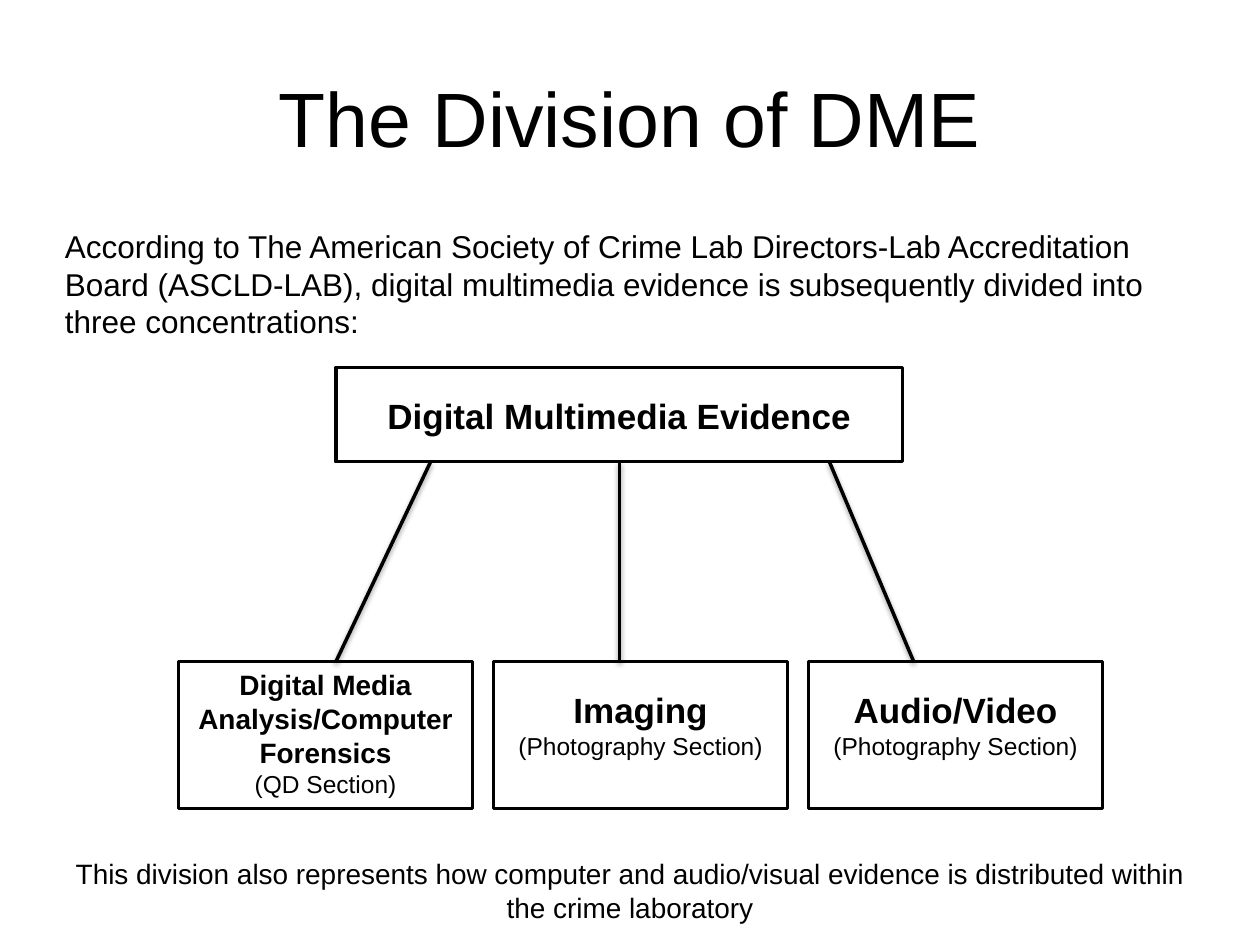
from lxml import etree
from pptx import Presentation
from pptx import util as u
from pptx.dml import color
from pptx.enum import shapes, text
from pptx.oxml import ns

LEFT, CENTER = text.PP_ALIGN.LEFT, text.PP_ALIGN.CENTER


def rgb(value):
    """Turn a hex string into a colour."""
    return color.RGBColor.from_string(value)


class Deck:
    """Hold the style and the current slide, and add elements to it."""

    font = "Arial"
    ink = "000000"
    line_width = 2

    def __init__(self, width, height):
        """Start a presentation of the given size in centimetres."""
        self.prs = Presentation()
        self.prs.slide_width, self.prs.slide_height = u.Cm(width), u.Cm(height)
        self.s = None

    def slide(self):
        """Add a title-only slide with a white background."""
        self.s = self.prs.slides.add_slide(self.prs.slide_layouts[5])
        fill = self.s.background.fill
        fill.solid()
        fill.fore_color.rgb = rgb("FFFFFF")

    def set_lines(self, tf, lines, align):
        """Fill a text frame with (text, size, bold) paragraphs."""
        tf.word_wrap = True
        for i, (line, size, bold) in enumerate(lines):
            p = tf.add_paragraph() if i else tf.paragraphs[0]
            p.text = line
            p.alignment = align
            for r in p.runs:
                r.font.name = self.font
                r.font.size = u.Pt(size)
                r.font.bold = bold
                r.font.color.rgb = rgb(self.ink)

    def title(self, line, x, y, w, h):
        """Place and fill the title placeholder."""
        sp = self.s.shapes.title
        sp.left, sp.top, sp.width, sp.height = map(u.Cm, (x, y, w, h))
        sp.text_frame.vertical_anchor = text.MSO_ANCHOR.MIDDLE
        self.set_lines(sp.text_frame, [(line, 44, False)], CENTER)

    def text(self, lines, x, y, w, h, align=CENTER):
        """Add a text box that grows with its text."""
        tf = self.s.shapes.add_textbox(*map(u.Cm, (x, y, w, h))).text_frame
        self.set_lines(tf, lines, align)
        tf.auto_size = text.MSO_AUTO_SIZE.SHAPE_TO_FIT_TEXT

    def outline(self, sp):
        """Apply the common line style."""
        sp.line.color.rgb = rgb(self.ink)
        sp.line.width = u.Pt(self.line_width)

    def box(self, x, y, w, h):
        """Add an unfilled rectangle."""
        sp = self.s.shapes.add_shape(shapes.MSO_SHAPE.RECTANGLE, *map(u.Cm, (x, y, w, h)))
        sp.shadow.inherit = False
        sp.fill.background()
        self.outline(sp)

    def link(self, x1, y1, x2, y2):
        """Add a straight line with a soft shadow below it."""
        sp = self.s.shapes.add_connector(
            shapes.MSO_CONNECTOR.STRAIGHT, *map(u.Cm, (x1, y1, x2, y2)))
        self.outline(sp)
        effects = etree.SubElement(sp._element.spPr, ns.qn("a:effectLst"))
        shadow = etree.SubElement(
            effects, ns.qn("a:outerShdw"), blurRad=str(u.Pt(3.1)),
            dist=str(u.Pt(1.6)), dir="5400000", rotWithShape="0")
        tint = etree.SubElement(shadow, ns.qn("a:srgbClr"), val=self.ink)
        etree.SubElement(tint, ns.qn("a:alpha"), val="38000")


def main():
    """Build the slide and save it."""
    deck = Deck(25.4, 19.05)
    deck.slide()
    deck.title("The Division of DME", 1.27, 0.76, 22.86, 3.18)
    deck.text([("According to The American Society of Crime Lab Directors-Lab "
                "Accreditation Board (ASCLD-LAB), digital multimedia evidence is "
                "subsequently divided into three concentrations:", 18, False)],
              1.06, 4.45, 22.86, 2.57, LEFT)

    root_x, root_y, root_w, root_h = 6.77, 7.41, 11.43, 1.9
    branch_x, branch_y, branch_w, branch_h, pitch = 3.6, 13.34, 5.93, 2.96, 6.35
    deck.box(root_x, root_y, root_w, root_h)
    deck.text([("Digital Multimedia Evidence", 20, True)], root_x, 7.83, root_w, 1.11)

    branches = [
        ("Digital Media Analysis/Computer Forensics", 16, "(QD Section)", 0, 2.9, 8.68, 6.77),
        ("Imaging", 20, "(Photography Section)", 0.42, 1.7, 12.49, 12.49),
        ("Audio/Video", 20, "(Photography Section)", 0.42, 1.7, 16.72, 18.42),
    ]
    for i, (name, size, section, drop, h, start, end) in enumerate(branches):
        x = branch_x + i * pitch
        deck.link(start, root_y + root_h, end, branch_y)
        deck.box(x, branch_y, branch_w, branch_h)
        deck.text([(name, size, True), (section, 14, False)], x, branch_y + drop, branch_w, h)

    deck.text([("This division also represents how computer and audio/visual evidence "
                "is distributed within the crime laboratory", 16, False)],
              1.06, 17.15, 23.28, 1.62)
    deck.prs.save("out.pptx")


if __name__ == "__main__":
    main()
